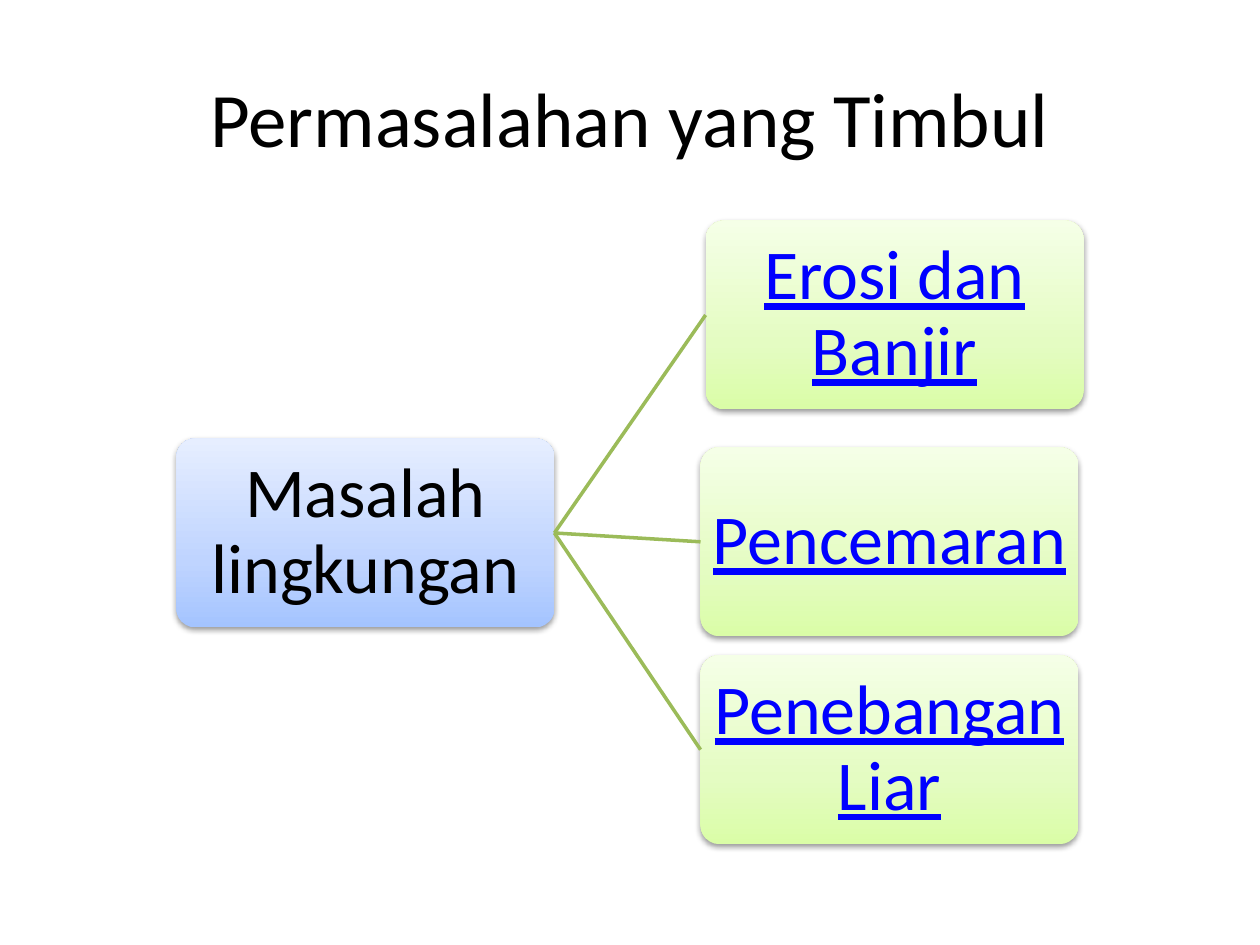
from lxml import etree
from pptx import Presentation
from pptx.dml.color import RGBColor
from pptx.enum import shapes, text
from pptx.oxml import parse_xml
from pptx.oxml.ns import nsdecls, qn
from pptx.util import Inches, Pt

TITLE = "Permasalahan yang Timbul"
CAUSE = ("Masalah lingkungan", 1.4, 3.48)
PROBLEMS = [
    ("Erosi dan Banjir", 5.6, 1.75),
    ("Pencemaran", 5.56, 3.55),
    ("Penebangan Liar", 5.56, 5.2),
]
BOX_W, BOX_H = 3, 1.5
BLUE = [(0, "A4C4FF"), (35, "BFD4FF"), (100, "E6EEFF")]
GREEN = [(0, "DAFDA7"), (35, "E4FCC2"), (100, "F5FFE7")]
BLACK, LINK, LINE = "000000", "0000FF", "9BBB59"
RIGHT, LEFT = 3, 1


def rgb(color):
    return RGBColor.from_string(color)


def style_text(tf, size, color, underline=None):
    tf.word_wrap = True
    tf.vertical_anchor = text.MSO_ANCHOR.MIDDLE
    p = tf.paragraphs[0]
    p.alignment = text.PP_ALIGN.CENTER
    font = p.runs[0].font
    font.name, font.size, font.underline = "Calibri", Pt(size), underline
    font.color.rgb = rgb(color)
    return p


def add_gradient(s, stops):
    """Fill the shape from bottom to top with (percent, colour) stops."""
    gs = "".join(f'<a:gs pos="{pos * 1000}"><a:srgbClr val="{color}"/></a:gs>'
                 for pos, color in stops)
    s._element.spPr.find(qn("a:prstGeom")).addnext(parse_xml(
        f'<a:gradFill {nsdecls("a")} rotWithShape="1"><a:gsLst>{gs}</a:gsLst>'
        '<a:lin ang="16200000" scaled="0"/></a:gradFill>'))


def add_shadow(s):
    s.shadow.inherit = False
    s._element.spPr.find(qn("a:effectLst")).append(parse_xml(
        f'<a:outerShdw {nsdecls("a")} blurRad="40000" dist="20000" dir="5400000" '
        'rotWithShape="0"><a:srgbClr val="000000"><a:alpha val="38000"/>'
        '</a:srgbClr></a:outerShdw>'))


def add_box(slide, label, left, top, stops, color, underline=None):
    s = slide.shapes.add_shape(shapes.MSO_SHAPE.ROUNDED_RECTANGLE, Inches(left),
                               Inches(top), Inches(BOX_W), Inches(BOX_H))
    s.adjustments[0] = 0.1
    s.line.fill.background()
    add_gradient(s, stops)
    add_shadow(s)
    tf = s.text_frame
    tf.text = label
    tf.margin_left = tf.margin_right = tf.margin_top = tf.margin_bottom = Inches(0.03)
    style_text(tf, 40, color, underline).line_spacing = 0.9
    return s


def join(slide, start, end):
    line = slide.shapes.add_connector(shapes.MSO_CONNECTOR.STRAIGHT, 0, 0, 0, 0)
    line.begin_connect(start, RIGHT)
    line.end_connect(end, LEFT)
    line.line.color.rgb = rgb(LINE)
    line.line.width = Pt(2)
    etree.SubElement(line._element.spPr, qn("a:effectLst"))


def main():
    prs = Presentation()
    prs.slide_width, prs.slide_height = Inches(10), Inches(7.5)
    slide = prs.slides.add_slide(prs.slide_layouts[5])

    title = slide.shapes.title
    title.left, title.top = Inches(0.5), Inches(0.3)
    title.width, title.height = Inches(9), Inches(1.25)
    title.text_frame.text = TITLE
    style_text(title.text_frame, 44, BLACK)

    cause = add_box(slide, *CAUSE, BLUE, BLACK)
    for problem in PROBLEMS:
        join(slide, cause, add_box(slide, *problem, GREEN, LINK, underline=True))

    prs.save("out.pptx")


if __name__ == "__main__":
    main()
